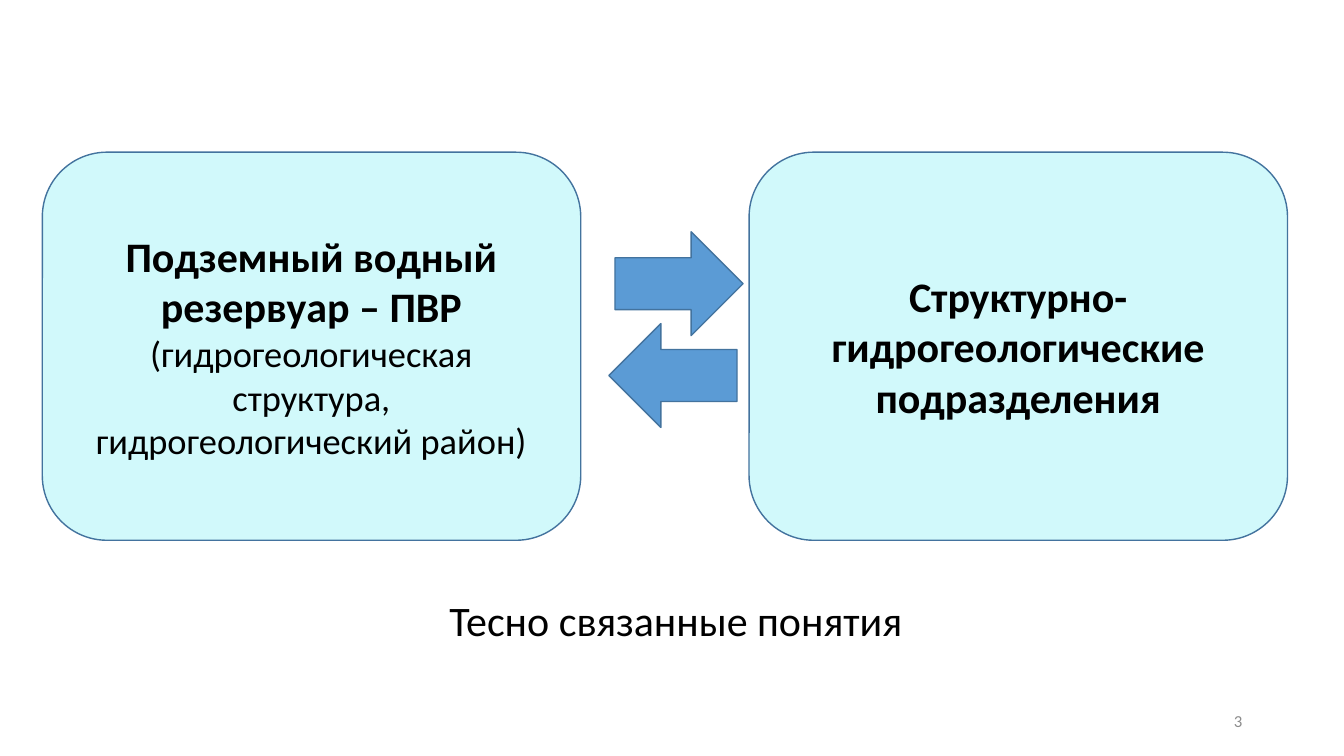
from dataclasses import dataclass

from pptx import Presentation
from pptx.dml.color import RGBColor
from pptx.enum.shapes import MSO_SHAPE
from pptx.enum.text import MSO_ANCHOR, MSO_AUTO_SIZE, PP_ALIGN
from pptx.shapes.autoshape import Shape
from pptx.slide import Slide
from pptx.util import Inches, Pt


@dataclass(frozen=True)
class Theme:
    font: str = "Calibri"
    text: RGBColor = RGBColor(0x00, 0x00, 0x00)
    muted: RGBColor = RGBColor(0x8C, 0x8C, 0x8C)
    card: RGBColor = RGBColor(0xD1, 0xF9, 0xFB)
    arrow: RGBColor = RGBColor(0x5B, 0x9B, 0xD5)
    outline: RGBColor = RGBColor(0x43, 0x73, 0x9E)
    outline_width: float = 1
    main_size: int = 30
    detail_size: int = 26
    number_size: int = 12


@dataclass(frozen=True)
class Concept:
    left: float
    title: str
    details: tuple[str, ...] = ()


@dataclass(frozen=True)
class Arrow:
    left: float
    top: float
    rotation: int = 0


THEME = Theme()
CARD_TOP, CARD_WIDTH, CARD_HEIGHT = 1.51, 5.34, 3.85
ARROW_WIDTH, ARROW_HEIGHT = 1.27, 1.03

CONCEPTS = (
    Concept(
        0.42,
        "Подземный водный резервуар – ПВР",
        ("(гидрогеологическая структура,", "гидрогеологический район)"),
    ),
    Concept(7.43, "Структурно-гидрогеологические подразделения"),
)
ARROWS = (Arrow(6.1, 2.3), Arrow(6.04, 3.21, rotation=180))


def add_text(sp: Shape, text: str, size: int, align: PP_ALIGN,
             color: RGBColor = THEME.text, bold: bool = False) -> None:
    """Fill the first paragraph, or append one if it is already used."""
    tf = sp.text_frame
    p = tf.add_paragraph() if tf.text else tf.paragraphs[0]
    p.text = text
    p.alignment = align
    p.font.name = THEME.font
    p.font.size = Pt(size)
    p.font.bold = bold
    p.font.color.rgb = color


def add_block(s: Slide, kind: MSO_SHAPE, left: float, top: float,
              width: float, height: float, fill: RGBColor) -> Shape:
    sp = s.shapes.add_shape(
        kind, Inches(left), Inches(top), Inches(width), Inches(height))
    sp.shadow.inherit = False
    sp.fill.solid()
    sp.fill.fore_color.rgb = fill
    sp.line.color.rgb = THEME.outline
    sp.line.width = Pt(THEME.outline_width)
    return sp


def add_concept(s: Slide, concept: Concept) -> None:
    sp = add_block(s, MSO_SHAPE.ROUNDED_RECTANGLE, concept.left, CARD_TOP,
                   CARD_WIDTH, CARD_HEIGHT, THEME.card)
    sp.text_frame.word_wrap = True
    sp.text_frame.vertical_anchor = MSO_ANCHOR.MIDDLE
    add_text(sp, concept.title, THEME.main_size, PP_ALIGN.CENTER, bold=True)
    for detail in concept.details:
        add_text(sp, detail, THEME.detail_size, PP_ALIGN.CENTER)


def add_arrow(s: Slide, arrow: Arrow) -> None:
    sp = add_block(s, MSO_SHAPE.RIGHT_ARROW, arrow.left, arrow.top,
                   ARROW_WIDTH, ARROW_HEIGHT, THEME.arrow)
    sp.rotation = arrow.rotation


def main() -> None:
    prs = Presentation()
    prs.slide_width, prs.slide_height = Inches(13.33), Inches(7.5)
    s = prs.slides.add_slide(prs.slide_layouts[6])

    # Slide number
    number = s.shapes.add_textbox(
        Inches(9.42), Inches(6.95), Inches(3), Inches(0.4))
    number.text_frame.word_wrap = True
    number.text_frame.vertical_anchor = MSO_ANCHOR.MIDDLE
    add_text(number, "3", THEME.number_size, PP_ALIGN.RIGHT, THEME.muted)

    # Two concepts and the arrows between them
    for concept in CONCEPTS:
        add_concept(s, concept)
    for arrow in ARROWS:
        add_arrow(s, arrow)

    # Caption
    caption = s.shapes.add_textbox(
        Inches(4.36), Inches(5.85), Inches(4.74), Inches(0.61))
    caption.text_frame.word_wrap = False
    caption.text_frame.auto_size = MSO_AUTO_SIZE.SHAPE_TO_FIT_TEXT
    add_text(caption, "Тесно связанные понятия", THEME.main_size, PP_ALIGN.LEFT)

    prs.save("out.pptx")


if __name__ == "__main__":
    main()
